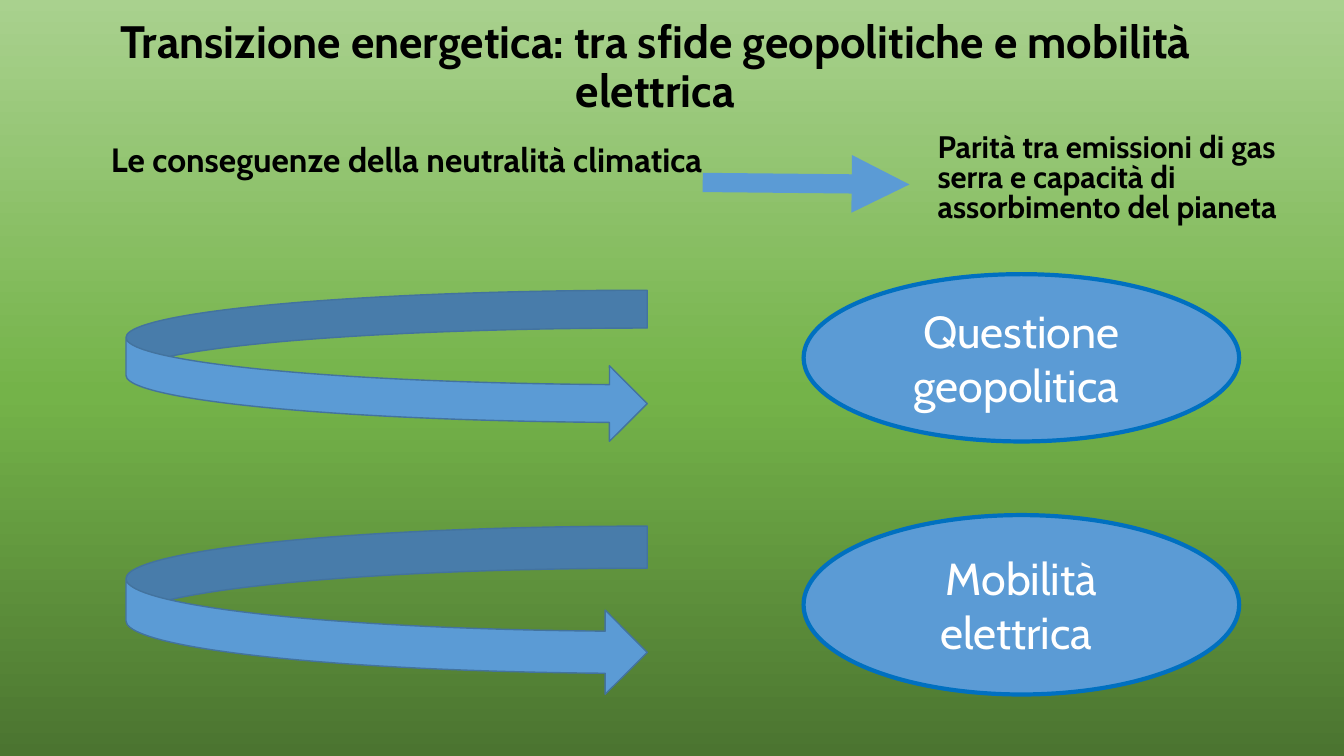
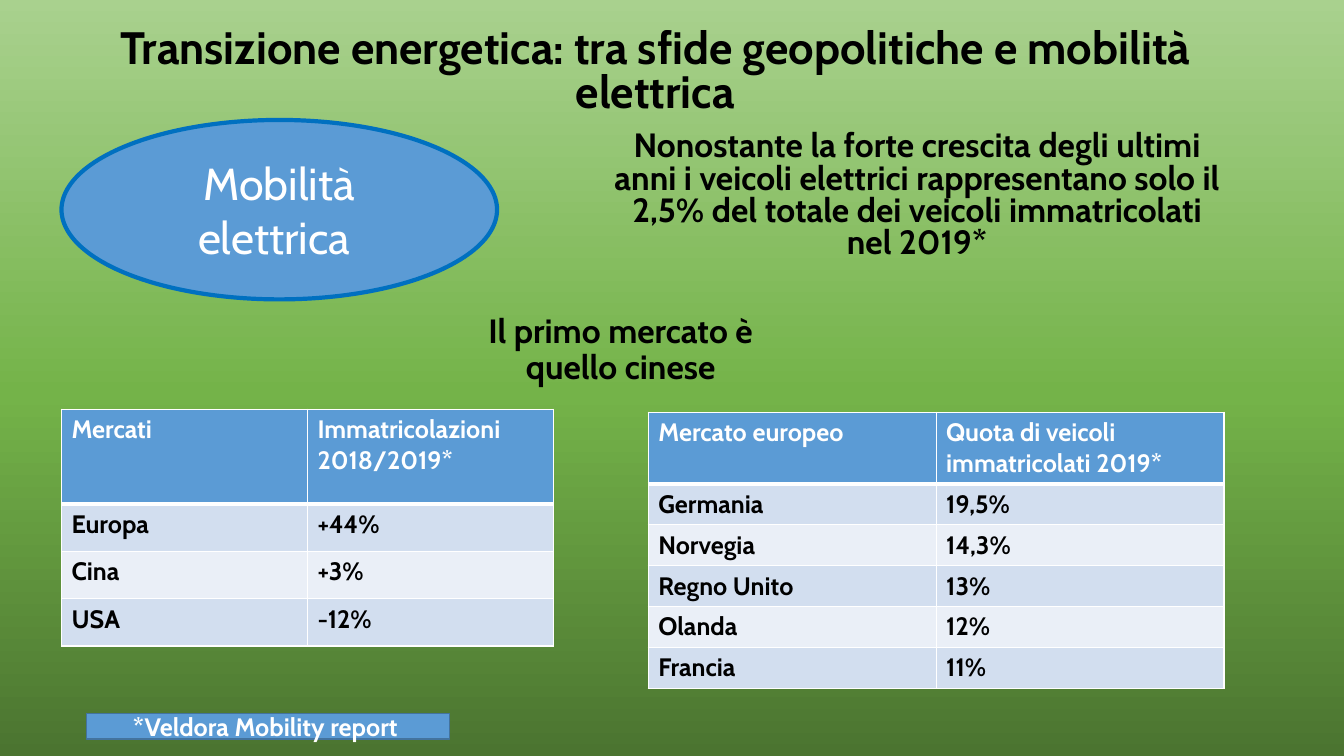
from copy import deepcopy

from lxml import etree
from pptx import Presentation
from pptx.dml.color import RGBColor
from pptx.enum.shapes import MSO_CONNECTOR, MSO_SHAPE
from pptx.enum.text import MSO_ANCHOR, MSO_AUTO_SIZE, PP_ALIGN
from pptx.oxml.ns import qn
from pptx.util import Inches, Pt

LEFT, CENTER = PP_ALIGN.LEFT, PP_ALIGN.CENTER
TOP, MIDDLE, BOTTOM = MSO_ANCHOR.TOP, MSO_ANCHOR.MIDDLE, MSO_ANCHOR.BOTTOM
NO_AUTOFIT = MSO_AUTO_SIZE.NONE
ELLIPSE, RECTANGLE = MSO_SHAPE.OVAL, MSO_SHAPE.RECTANGLE
CURVED_ARROW = MSO_SHAPE.CURVED_RIGHT_ARROW
STRAIGHT = MSO_CONNECTOR.STRAIGHT

FONT = "Cabin"
BLACK, WHITE = "000000", "FFFFFF"
BLUE, RIM, EDGE = "5B9BD5", "0070C0", "43739E"
BANDS = ("D2DEEF", "EAEFF7")
GRADIENT = ((0, "4B7430"), (0.48, "74B349"), (1, "A9D18E"))
TITLE = "Transizione energetica: tra sfide geopolitiche e mobilità elettrica"
TITLE_BOX = (0.86, 0.17, 11.28, 1.04)

MARKETS = (
    ("Mercati", "Immatricolazioni\n2018/2019*"),
    ("Europa", "+44%"),
    ("Cina", "+3%"),
    ("USA", "-12%"),
)
EUROPE = (
    ("Mercato europeo", "Quota di veicoli immatricolati 2019*"),
    ("Germania", "19,5%"),
    ("Norvegia", "14,3%"),
    ("Regno Unito", "13%"),
    ("Olanda", "12%"),
    ("Francia", "11%"),
)


def color(value):
    return RGBColor.from_string(value)


def inches(box):
    return [Inches(length) for length in box]


def apply(target, values):
    for name, value in values.items():
        setattr(target, name, value)


def write(frame, text, size, ink=BLACK, bold=True, align=CENTER, spacing=1.0, before=0):
    frame.text = text
    for para in frame.paragraphs:
        apply(para, {"alignment": align, "line_spacing": spacing, "space_before": Pt(before)})
        for span in para.runs:
            apply(span.font, {"name": FONT, "size": Pt(size), "bold": bold})
            span.font.color.rgb = color(ink)


def set_frame(frame, anchor):
    apply(frame, {"word_wrap": True, "auto_size": NO_AUTOFIT, "vertical_anchor": anchor})


def place(holder, box, text, size, anchor=TOP, **style):
    names = ("left", "top", "width", "height")
    apply(holder, dict(zip(names, inches(box))))
    set_frame(holder.text_frame, anchor)
    write(holder.text_frame, text, size, **style)


def add_text(page, box, text, size, **style):
    holder = page.shapes.add_textbox(*inches(box))
    place(holder, box, text, size, **style)


def add_figure(page, kind, box, edge=EDGE, weight=1):
    figure = page.shapes.add_shape(kind, *inches(box))
    figure.shadow.inherit = False
    figure.fill.solid()
    figure.fill.fore_color.rgb = color(BLUE)
    figure.line.color.rgb = color(edge)
    figure.line.width = Pt(weight)
    return figure


def add_topic(page, box, text):
    topic = add_figure(page, ELLIPSE, box, RIM, 3)
    set_frame(topic.text_frame, MIDDLE)
    write(topic.text_frame, text, 32, ink=WHITE, bold=False)


def add_source(page, box, text):
    source = add_figure(page, RECTANGLE, box)
    set_frame(source.text_frame, MIDDLE)
    write(source.text_frame, text, 18, ink=WHITE)


def add_arrow(page, start, end):
    arrow = page.shapes.add_connector(STRAIGHT, *inches(start + end))
    arrow.line.color.rgb = color(BLUE)
    arrow.line.width = Pt(13.75)
    etree.SubElement(arrow.line._get_or_add_ln(), qn("a:tailEnd"), type="triangle")
    etree.SubElement(arrow._element.spPr, qn("a:effectLst"))


def add_borders(cell, row):
    weights = {"L": 1, "R": 1, "T": 3 if row == 1 else 1, "B": 3 if row == 0 else 1}
    properties = cell._tc.get_or_add_tcPr()
    for side, weight in weights.items():
        border = etree.SubElement(properties, qn(f"a:ln{side}"), w=str(Pt(weight)))
        fill = etree.SubElement(border, qn("a:solidFill"))
        etree.SubElement(fill, qn("a:srgbClr"), val=WHITE)


def add_data(page, box, rows, header_height, row_height):
    frame = page.shapes.add_table(len(rows), len(rows[0]), *inches(box))
    table = frame.table
    apply(table, {"first_row": False, "horz_banding": False})
    for index, values in enumerate(rows):
        header = index == 0
        table.rows[index].height = Inches(header_height if header else row_height)
        for column, text in enumerate(values):
            cell = table.cell(index, column)
            add_borders(cell, index)
            cell.fill.solid()
            cell.fill.fore_color.rgb = color(BLUE if header else BANDS[(index - 1) % 2])
            write(cell.text_frame, text, 18, ink=WHITE if header else BLACK, align=LEFT)


def set_background(master):
    fill = master.background.fill
    fill.gradient()
    fill.gradient_angle = 90
    stop_list = master.element.find(".//" + qn("p:bg")).find(".//" + qn("a:gsLst"))
    stop_list.append(deepcopy(stop_list[0]))
    for stop, (position, value) in zip(fill.gradient_stops, GRADIENT):
        stop.position = position
        stop.color.rgb = color(value)


def add_page(deck, spacing):
    page = deck.slides.add_slide(deck.slide_layouts[0])
    place(page.shapes.title, TITLE_BOX, TITLE, 32.4, anchor=BOTTOM, spacing=spacing)
    return page


def build_consequences(deck):
    page = add_page(deck, 0.9)
    place(page.placeholders[1], (0.54, 1.37, 7.06, 0.91),
          "Le conseguenze della neutralità climatica ", 24, spacing=0.9, before=10)
    topics = (("Questione geopolitica ", 2.88, 1.5, 2.72, 1.66),
              ("Mobilità elettrica ", 5.22, 1.67, 5.11, 1.78))
    for text, arrow_top, arrow_height, topic_top, topic_height in topics:
        add_figure(page, CURVED_ARROW, (1.25, arrow_top, 5.17, arrow_height))
        add_topic(page, (7.97, topic_top, 4.32, topic_height), text)
    add_arrow(page, (6.97, 1.81), (9.02, 1.83))
    add_text(page, (9.2, 1.29, 3.81, 1.37),
             "Parità tra emissioni di gas serra e capacità di assorbimento del pianeta",
             22.2, align=LEFT, spacing=0.8, before=10)


def build_mobility(deck):
    page = add_page(deck, 0.8)
    add_topic(page, (0.61, 1.19, 4.32, 1.78), "Mobilità elettrica ")
    add_text(page, (4.32, 3.07, 3.67, 1.03), "Il primo mercato è quello cinese",
             24, spacing=0.9, before=10)
    place(page.placeholders[1], (5.94, 1.26, 6.31, 1.81),
          "Nonostante la forte crescita degli ultimi anni i veicoli elettrici "
          "rappresentano solo il 2,5% del totale dei veicoli immatricolati nel 2019*",
          24, spacing=0.8, before=10)
    add_data(page, (0.61, 4.06, 4.88, 2.36), MARKETS, 0.94, 0.47)
    add_source(page, (0.86, 7.08, 3.6, 0.25), "*Veldora Mobility report ")
    add_data(page, (6.43, 4.09, 5.71, 2.7), EUROPE, 0.7, 0.4)


def main():
    deck = Presentation()
    apply(deck, {"slide_width": Inches(13.33), "slide_height": Inches(7.5)})
    set_background(deck.slide_master)
    build_consequences(deck)
    build_mobility(deck)
    deck.save("out.pptx")


if __name__ == "__main__":
    main()
